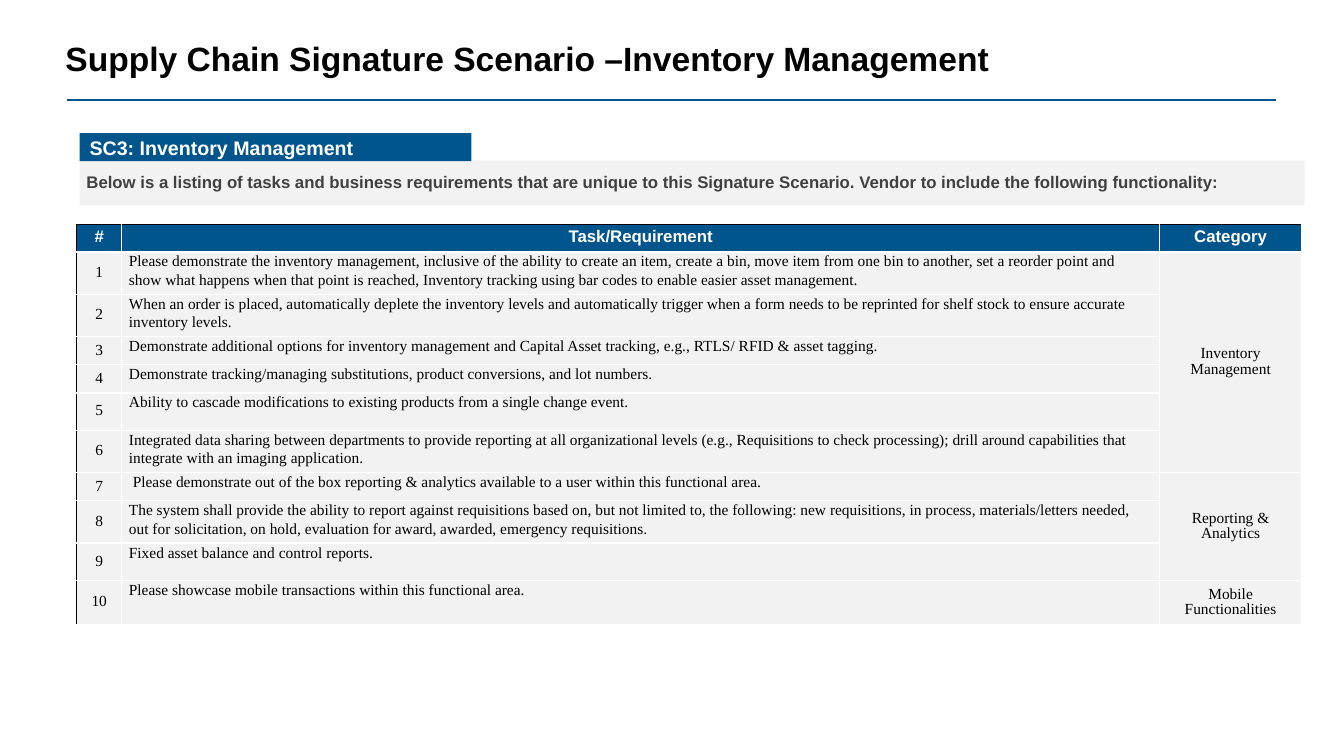
from lxml import etree
from pptx import Presentation
from pptx.dml.color import RGBColor
from pptx.enum.shapes import MSO_CONNECTOR as CONNECTOR, MSO_SHAPE as SHAPE
from pptx.enum.text import MSO_ANCHOR as ANCHOR, PP_ALIGN as ALIGN
from pptx.oxml import parse_xml
from pptx.oxml.ns import nsdecls, qn
from pptx.util import Inches, Pt

BLUE = RGBColor(0x00, 0x55, 0x8C)
GRAY = RGBColor(0xF2, 0xF2, 0xF2)
DARK_GRAY = RGBColor(0x40, 0x40, 0x40)
BLACK = RGBColor(0, 0, 0)
WHITE = RGBColor(0xFF, 0xFF, 0xFF)


def write_text(frame, text, size, color, name="Arial", bold=True, align=ALIGN.LEFT):
    frame.text = text
    frame.word_wrap = True
    paragraph = frame.paragraphs[0]
    paragraph.alignment = align
    font = paragraph.font
    font.size, font.name, font.bold = Pt(size), name, bold
    font.color.rgb = color
    return paragraph


def set_borders(cell, left, top):
    properties = cell._tc.get_or_add_tcPr()
    sides = (("L", left), ("R", WHITE), ("T", top), ("B", WHITE))
    for position, (side, color) in enumerate(sides):
        properties.insert(position, parse_xml(
            f'<a:ln{side} {nsdecls("a")} w="12700"><a:solidFill>'
            f'<a:srgbClr val="{color}"/></a:solidFill></a:ln{side}>'))


presentation = Presentation()
presentation.slide_width = Inches(13.34)
presentation.slide_height = Inches(7.5)
slide = presentation.slides.add_slide(presentation.slide_layouts[5])
shapes = slide.shapes

rule = shapes.add_connector(
    CONNECTOR.STRAIGHT, Inches(0.67), Inches(0.99), Inches(12.67), Inches(0.99))
rule.line.color.rgb = BLUE
rule.line.width = Pt(1.5)
etree.SubElement(rule._element.spPr, qn("a:effectLst"))

title = shapes.title
title.left, title.top = Inches(0.55), Inches(0.37)
title.width, title.height = Inches(12.01), Inches(0.65)
title.text_frame.vertical_anchor = ANCHOR.TOP
heading = write_text(
    title.text_frame, "Supply Chain Signature Scenario –Inventory Management", 24, BLACK)
heading.line_spacing = 0.9

bands = []
for top, width, height, color in ((1.59, 12.16, 0.45, GRAY), (1.32, 3.89, 0.28, BLUE)):
    band = shapes.add_shape(
        SHAPE.RECTANGLE, Inches(0.79), Inches(top), Inches(width), Inches(height))
    band.fill.solid()
    band.fill.fore_color.rgb = color
    band.line.fill.background()
    band.shadow.inherit = False
    bands.append(band)
label = bands[1].text_frame
label.vertical_anchor = ANCHOR.MIDDLE
write_text(label, "SC3: Inventory Management", 14, WHITE)

headers = ("#", "Task/Requirement", "Category")
column_widths = (0.45, 10.3, 1.41)
row_heights = (0.27, 0.42, 0.42, 0.28, 0.28, 0.37, 0.42, 0.28, 0.42, 0.37, 0.44)
tasks = (
    "Please demonstrate the inventory management, inclusive of the ability to create an item, "
    "create a bin, move item from one bin to another, set a reorder point and show what happens "
    "when that point is reached, Inventory tracking using bar codes to enable easier asset "
    "management.",
    "When an order is placed, automatically deplete the inventory levels and automatically "
    "trigger when a form needs to be reprinted for shelf stock to ensure accurate inventory "
    "levels.",
    "Demonstrate additional options for inventory management and Capital Asset tracking, e.g., "
    "RTLS/ RFID & asset tagging.",
    "Demonstrate tracking/managing substitutions, product conversions, and lot numbers.",
    "Ability to cascade modifications to existing products from a single change event.",
    "Integrated data sharing between departments to provide reporting at all organizational "
    "levels (e.g., Requisitions to check processing); drill around capabilities that integrate "
    "with an imaging application.",
    " Please demonstrate out of the box reporting & analytics available to a user within this "
    "functional area.",
    "The system shall provide the ability to report against requisitions based on, but not "
    "limited to, the following: new requisitions, in process, materials/letters needed, out for "
    "solicitation, on hold, evaluation for award, awarded, emergency requisitions.",
    "Fixed asset balance and control reports.",
    "Please showcase mobile transactions within this functional area.",
)
categories = {
    1: ("Inventory Management", 6),
    7: ("Reporting & Analytics", 3),
    10: ("Mobile Functionalities", 1),
}

table = shapes.add_table(
    len(row_heights), len(headers), Inches(0.76), Inches(2.23),
    Inches(sum(column_widths)), Inches(sum(row_heights))).table
for column, width in zip(table.columns, column_widths):
    column.width = Inches(width)
for row, height in zip(table.rows, row_heights):
    row.height = Inches(height)

rows = [headers]
for number, task in enumerate(tasks, 1):
    rows.append((str(number), task, categories.get(number, ("", 1))[0]))

for row_index, texts in enumerate(rows):
    is_header = row_index == 0
    for column_index, text in enumerate(texts):
        cell = table.cell(row_index, column_index)
        cell.fill.solid()
        cell.fill.fore_color.rgb = BLUE if is_header else GRAY
        set_borders(cell, BLACK if column_index == 0 else WHITE, BLACK if is_header else WHITE)
        is_task = column_index == 1 and not is_header
        cell.margin_left = cell.margin_right = Inches(0.07 if is_task else 0.05)
        cell.margin_top = cell.margin_bottom = Inches(0 if is_task else 0.05)
        cell.vertical_anchor = ANCHOR.TOP if is_task else ANCHOR.MIDDLE
        align = ALIGN.LEFT if is_task else ALIGN.CENTER
        if is_header:
            paragraph = write_text(cell.text_frame, text, 12, WHITE, align=align)
        else:
            paragraph = write_text(
                cell.text_frame, text, 11, BLACK, "Times New Roman", False, align)
        paragraph.line_spacing = 1.07 if is_task else Pt(11)

for first_row, (category, span) in categories.items():
    if span > 1:
        table.cell(first_row, 2).merge(table.cell(first_row + span - 1, 2))

intro = shapes.add_textbox(Inches(0.76), Inches(1.65), Inches(12.16), Inches(0.3))
write_text(
    intro.text_frame,
    "Below is a listing of tasks and business requirements that are unique to this Signature "
    "Scenario. Vendor to include the following functionality:", 12, DARK_GRAY)

presentation.save("out.pptx")
